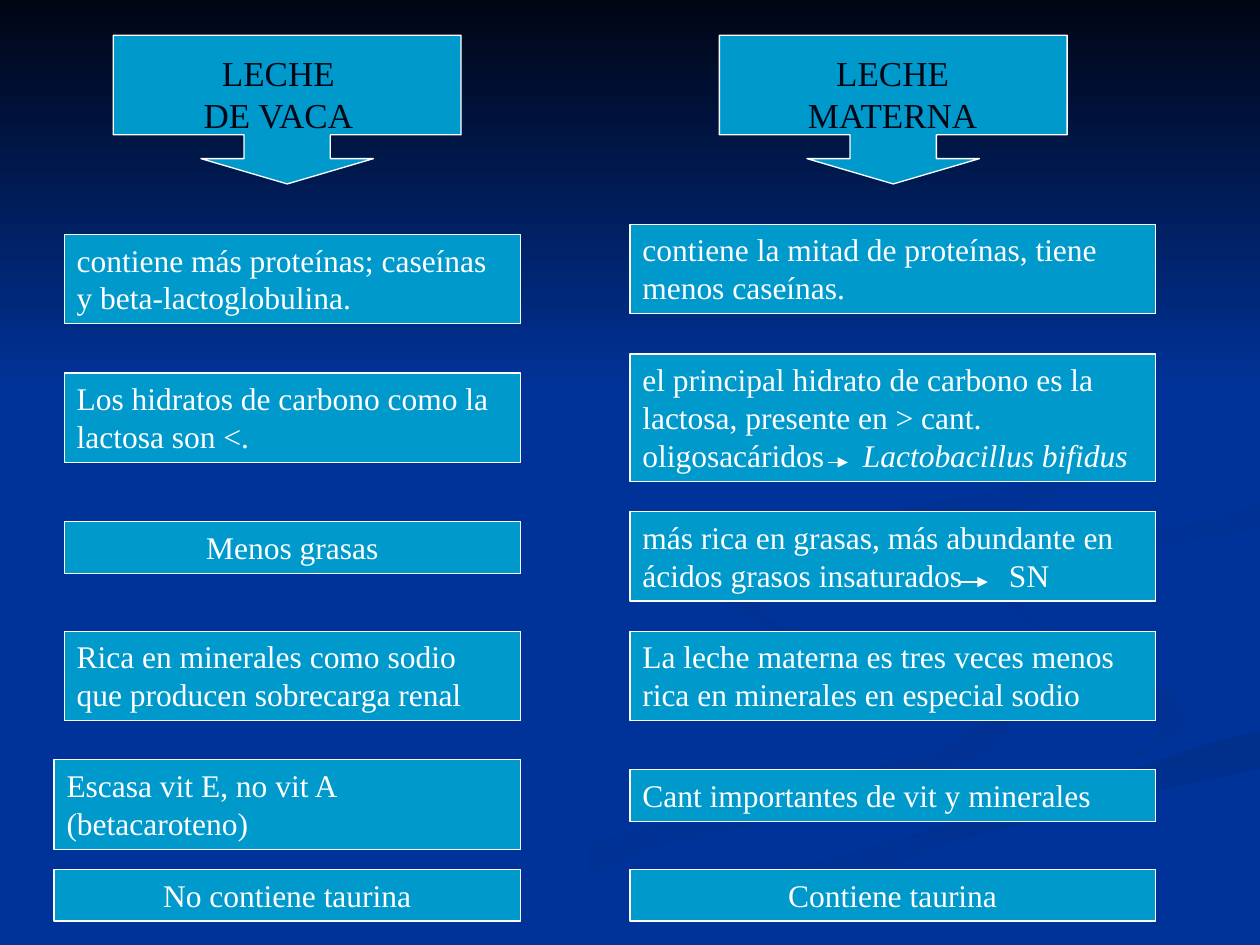
from lxml import etree
from pptx import Presentation, util as u
from pptx.dml.color import RGBColor
from pptx.enum import shapes, text
from pptx.oxml.ns import qn

NAVY, BLUE, CYAN, WHITE = "000514", "003399", "0099CC", "FFFFFF"
FONT = "Times New Roman"

prs = Presentation()
prs.slide_width, prs.slide_height = u.Inches(10), u.Inches(7.5)
CELL = prs.slide_width // 100  # grid of 100 columns by 75 rows
slide = prs.slides.add_slide(prs.slide_layouts[6])
items = slide.shapes


def paint(part, start, end=None, angle=0, outline=None):
    """Flat fill, or a gradient when an end colour is given."""
    part.shadow.inherit = False
    if end:
        part.fill.gradient()
        part.fill.gradient_angle = angle
        for stop, shade in zip(part.fill.gradient_stops, (start, end)):
            stop.color.rgb = RGBColor.from_string(shade)
    else:
        part.fill.solid()
        part.fill.fore_color.rgb = RGBColor.from_string(start)
    if outline:
        part.line.color.rgb = RGBColor.from_string(outline)
        part.line.width = u.Pt(0.75)
    else:
        part.line.fill.background()


def write(part, words, size, color, centred):
    frame = part.text_frame
    frame.word_wrap = True
    frame.vertical_anchor = text.MSO_ANCHOR.TOP
    frame.text = words
    line = frame.paragraphs[0]
    line.alignment = text.PP_ALIGN.CENTER if centred else text.PP_ALIGN.LEFT
    for run in line.runs:
        run.font.size, run.font.name = u.Pt(size), FONT
        run.font.color.rgb = RGBColor.from_string(color)
    return line


# Background: plain blue, faint ribbons, dark band at the top
slide.background.fill.solid()
slide.background.fill.fore_color.rgb = RGBColor.from_string(BLUE)

ribbons = [
    # inner ripple
    (BLUE, "003193", 0, [
        (78.1, 55.3), (74.5, 53.8), (68.2, 51.9), (62.6, 50.2), (58.7, 48.1), (57.4, 46.4),
        (57.5, 45.9), (57, 47.2), (58.1, 48.4), (61.1, 49.5), (67.9, 51.9), (74.1, 53.9),
        (77.6, 55.3), (78.6, 56.6), (77.4, 58.3), (73.9, 59.8), (68.4, 61.3), (57.9, 63.9),
        (45.8, 67.4), (37.6, 70.7), (30, 74.9), (36.1, 74.9), (43.1, 71.4), (53.2, 67.4),
        (62.3, 64.7), (72.1, 62.3), (78, 60.5), (80, 58.1), (79.2, 56.1)]),
    # outer ripple
    (BLUE, "003193", 315, [
        (94.3, 57), (93, 55.3), (90.5, 54), (85, 52.4), (79.2, 50.9), (74.5, 49), (72.7, 47.4),
        (72.4, 46.4), (73, 48.4), (75.5, 50.5), (79.7, 52.4), (86.8, 54.4), (90.7, 56.2),
        (91.8, 58.1), (90.7, 59.7), (89.4, 60.5), (92.5, 59.3), (94.1, 58.1)]),
    # lower sweep
    ("002F8C", BLUE, 270, [
        (51.9, 74.7), (50.3, 74.9), (57.1, 74.9), (61.4, 72.6), (67, 70.2), (75.2, 67.2),
        (86.1, 64), (99.8, 60.9), (99.8, 58.1), (96.3, 59.4), (90.3, 61), (79.7, 63.8),
        (69.6, 66.9), (63, 69.3), (56.9, 71.9)]),
    # right-hand wisp
    ("003091", BLUE, 315, [
        (78.1, 46), (78.6, 47.4), (80.6, 48.7), (82.6, 49.6), (80.9, 48.4), (80.5, 47.2),
        (81.6, 45.9), (85.9, 44.3), (93.6, 42.9), (99.8, 42), (99.8, 40.2), (93.3, 41.5),
        (86.5, 42.4), (81, 43.7)]),
    # upper loop
    ("002F8E", BLUE, 315, [
        (68.3, 43), (76.4, 41.7), (82.5, 40.2), (86.7, 38.4), (88.9, 36.2), (89.3, 33.5),
        (88, 30.7), (85.4, 28.3), (81, 25.6), (76.2, 23.3), (82.6, 26.6), (87, 29.9),
        (88.9, 33.5), (87.6, 36), (84.2, 37.8), (79.1, 39.2), (67.6, 41.4), (60.5, 43.3),
        (57.7, 46.2), (59, 48.4), (62.2, 50), (59.7, 48), (59.4, 46.5), (61.4, 44.8)]),
    # top band
    (NAVY, BLUE, 270, [(0, 0), (100, 0), (100, 30.8), (0, 30.8)]),
]
for start, end, angle, points in ribbons:
    outline = items.build_freeform(*points[0], scale=CELL)
    outline.add_line_segments(points[1:], close=True)
    paint(outline.convert_to_shape(), start, end, angle)

# Column headings: callout arrow with its caption
for heading, arrow_left, caption_left, caption_width in [
        ("LECHE DE VACA", 9, 14.6, 15), ("LECHE MATERNA", 57.1, 62.6, 16.5)]:
    arrow = items.add_shape(shapes.MSO_SHAPE.DOWN_ARROW_CALLOUT,
                            *(int(n * CELL) for n in (arrow_left, 2.8, 27.6, 11.8)))
    for i, share in enumerate((0.58, 0.58, 0.17, 0.67)):
        arrow.adjustments[i] = share
    paint(arrow, CYAN, outline=WHITE)
    caption = items.add_textbox(*(int(n * CELL) for n in (caption_left, 3.6, caption_width, 7.7)))
    write(caption, heading, 20, NAVY, True)

# Facts: left column, top row, width, lines of text, centred, tab stop, words
COW, VITAMIN, MOTHER = (5.1, 36.2), (4.3, 37), (50, 41.7)
facts = [
    (COW, 18.6, 2, False, None, "contiene más proteínas; caseínas y beta-lactoglobulina."),
    (COW, 29.6, 2, False, None, "Los hidratos de carbono como la lactosa son <."),
    (COW, 41.4, 1, True, None, "Menos grasas"),
    (COW, 50.1, 2, False, None, "Rica en minerales como sodio que producen sobrecarga renal"),
    (VITAMIN, 60.3, 2, False, None, "Escasa vit E, no vit A (betacaroteno)"),
    (VITAMIN, 69, 1, True, None, "No contiene taurina"),
    (MOTHER, 17.8, 2, False, None, "contiene la mitad de proteínas, tiene menos caseínas."),
    (MOTHER, 28.1, 3, False, 17.5,
     "el principal hidrato de carbono es la lactosa, presente en > cant. oligosacáridos\t"),
    (MOTHER, 40.6, 2, False, 29.1,
     "más rica en grasas, más abundante en ácidos grasos insaturados\tSN"),
    (MOTHER, 50.1, 2, False, None,
     "La leche materna es tres veces menos rica en minerales en especial sodio"),
    (MOTHER, 61.1, 1, False, None, "Cant importantes de vit y minerales"),
    (MOTHER, 69, 1, True, None, "Contiene taurina"),
]
for (left, width), top, lines, centred, tab, words in facts:
    fact = items.add_shape(shapes.MSO_SHAPE.RECTANGLE,
                           *(int(n * CELL) for n in (left, top, width, 3 * lines + 1.1)))
    paint(fact, CYAN, outline=WHITE)
    line = write(fact, words, 18, WHITE, centred)
    if tab:
        stops = etree.SubElement(line._p.get_or_add_pPr(), qn("a:tabLst"))
        etree.SubElement(stops, qn("a:tab"), pos=str(int(tab * CELL)), algn="l")
    if words.endswith("\t"):
        species = line.add_run()
        species.text = "Lactobacillus bifidus"
        species.font.size, species.font.name, species.font.italic = u.Pt(18), FONT, True
        species.font.color.rgb = RGBColor.from_string(WHITE)

# Small arrows inside the sentences
for begin, end, row in [(65.7, 67.3, 36.7), (76, 78.4, 46.2)]:
    leads_to = items.add_connector(shapes.MSO_CONNECTOR.STRAIGHT,
                                   *(int(n * CELL) for n in (begin, row, end, row)))
    leads_to.line.color.rgb = RGBColor.from_string(WHITE)
    leads_to.line.width = u.Pt(0.75)
    etree.SubElement(leads_to.line._get_or_add_ln(), qn("a:tailEnd"), type="triangle")
    etree.SubElement(leads_to._element.spPr, qn("a:effectLst"))

prs.save("out.pptx")
